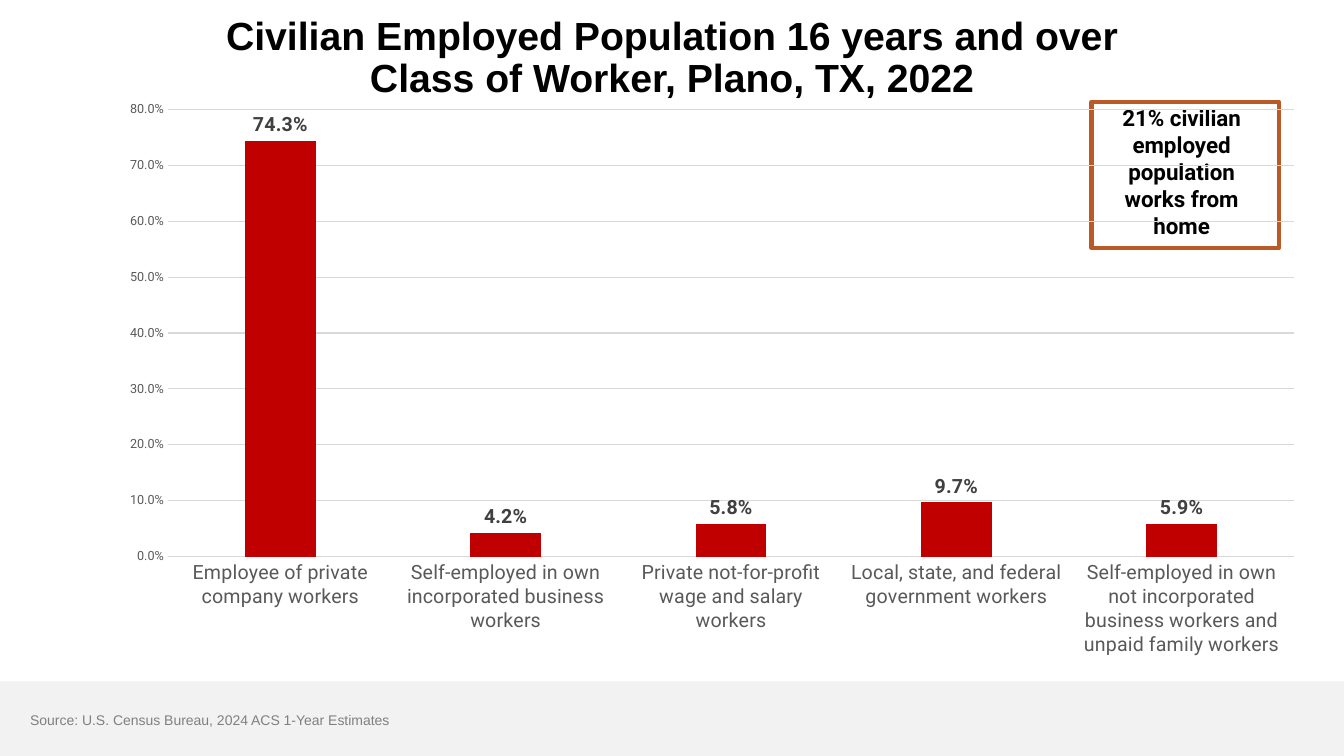
from pptx import Presentation
from pptx.chart.data import CategoryChartData
from pptx.dml.color import RGBColor
from pptx.enum.chart import XL_CHART_TYPE as Kind, XL_LABEL_POSITION as Spot, XL_TICK_MARK as Tick
from pptx.enum.shapes import MSO_SHAPE as Shape
from pptx.enum.text import MSO_ANCHOR as Anchor, MSO_AUTO_SIZE as Fit, PP_ALIGN as Align
from pptx.oxml import parse_xml
from pptx.oxml.ns import nsdecls, qn
from pptx.util import Cm, Pt

BLACK = RGBColor(0x00, 0x00, 0x00)
RED = RGBColor(0xC0, 0x00, 0x00)
RUST = RGBColor(0xBA, 0x5A, 0x27)
DARK = RGBColor(0x40, 0x40, 0x40)
SLATE = RGBColor(0x59, 0x59, 0x59)
GRAY = RGBColor(0x80, 0x80, 0x80)
SILVER = RGBColor(0xD9, 0xD9, 0xD9)
PALE = RGBColor(0xF2, 0xF2, 0xF2)

WIDTH, HEIGHT = 33.87, 19.05
TITLE = ("Civilian Employed Population 16 years and over",
         "Class of Worker, Plano, TX, 2022")
SHARES = {
    "Employee of private company workers": 0.743,
    "Self-employed in own incorporated business workers": 0.042,
    "Private not-for-profit wage and salary workers": 0.058,
    "Local, state, and federal government workers": 0.097,
    "Self-employed in own not incorporated business workers"
    " and unpaid family workers": 0.059,
}


def style(font, face, size, color, bold=False):
    font.name, font.size, font.bold = face, Pt(size), bold
    font.color.rgb = color


def add_rect(slide, x, y, w, h):
    rect = slide.shapes.add_shape(Shape.RECTANGLE, Cm(x), Cm(y), Cm(w), Cm(h))
    rect.shadow.inherit = False
    return rect


def add_text(slide, x, y, w, h, text):
    frame = slide.shapes.add_textbox(Cm(x), Cm(y), Cm(w), Cm(h)).text_frame
    frame.word_wrap = True
    frame.text = text
    return frame, frame.paragraphs[0]


def add_title(slide, x, y, w, h):
    title = slide.shapes.title
    title.left, title.top, title.width, title.height = Cm(x), Cm(y), Cm(w), Cm(h)
    frame = title.text_frame
    frame.auto_size = Fit.NONE
    frame.vertical_anchor = Anchor.MIDDLE
    para = frame.paragraphs[0]
    para.add_run().text = TITLE[0]
    para.add_line_break()
    para.add_run().text = TITLE[1]
    para.alignment, para.line_spacing = Align.CENTER, 0.9
    style(para.font, "Arial", 28, BLACK, True)


def add_footer(slide, x, y, w, h):
    band = add_rect(slide, x, y, w, h)
    band.fill.solid()
    band.fill.fore_color.rgb = PALE
    band.line.fill.background()
    frame, para = add_text(slide, x + 0.51, y + 0.48, 26.29, 1.02,
                           "Source: U.S. Census Bureau, 2024 ACS 1-Year Estimates")
    frame.vertical_anchor = Anchor.MIDDLE
    para.line_spacing = 0.9
    style(para.font, "Arial", 10, GRAY)


def add_note(slide, x, y, w, h):
    frame, para = add_text(slide, x + 0.15, y - 0.06, w - 0.48, h,
                           "21% civilian employed population works from home")
    frame.auto_size = Fit.SHAPE_TO_FIT_TEXT
    para.alignment = Align.CENTER
    style(para.font, "Roboto", 16, BLACK, True)
    edge = add_rect(slide, x, y, w, h)
    edge.fill.background()
    edge.line.color.rgb = RUST
    edge.line.width = Pt(3)


def set_plot(chart, x, y, w, h):
    """Fix the inner plot area as fractions of the chart; clear the backdrop."""
    area = chart.plots[0]._element.getparent()
    for old in area.findall(qn("c:layout")):
        area.remove(old)
    sizes = "".join(f'<c:{key} val="{val}"/>' for key, val in zip("xywh", (x, y, w, h)))
    area.insert(0, parse_xml(
        f'<c:layout {nsdecls("c")}><c:manualLayout><c:layoutTarget val="inner"/>'
        f'<c:xMode val="edge"/><c:yMode val="edge"/>{sizes}'
        '</c:manualLayout></c:layout>'))
    area.getparent().addnext(parse_xml(
        f'<c:spPr {nsdecls("c", "a")}><a:noFill/><a:ln><a:noFill/></a:ln></c:spPr>'))


def add_bars(slide, x, y, w, h):
    data = CategoryChartData(number_format="0.0%")
    data.categories = SHARES.keys()
    data.add_series("Series 1", SHARES.values())
    chart = slide.shapes.add_chart(
        Kind.COLUMN_CLUSTERED, Cm(x), Cm(y), Cm(w), Cm(h), data).chart
    chart.has_title = chart.has_legend = False
    style(chart.font, "Roboto", 10, BLACK)
    set_plot(chart, 0.051, 0.032, 0.929, 0.773)

    plot = chart.plots[0]
    plot.gap_width, plot.overlap, plot.vary_by_categories = 219, -27, False
    bars = plot.series[0].format.fill
    bars.solid()
    bars.fore_color.rgb = RED
    plot.has_data_labels = True
    labels = plot.data_labels
    labels.show_value, labels.position = True, Spot.OUTSIDE_END
    labels.number_format, labels.number_format_is_linked = "0.0%", False
    style(labels.font, "Roboto", 14, DARK, True)

    cats, vals = chart.category_axis, chart.value_axis
    for axis, size in ((cats, 14), (vals, 9)):
        axis.major_tick_mark = axis.minor_tick_mark = Tick.NONE
        style(axis.tick_labels.font, "Roboto", size, SLATE)
    vals.minimum_scale, vals.maximum_scale, vals.major_unit = 0, 0.8, 0.1
    vals.tick_labels.number_format = "0.0%"
    vals.tick_labels.number_format_is_linked = False
    vals.has_major_gridlines = True
    vals.format.line.fill.background()
    for line in (cats.format.line, vals.major_gridlines.format.line):
        line.color.rgb = SILVER
        line.width = Pt(0.75)


def main():
    deck = Presentation()
    deck.slide_width, deck.slide_height = Cm(WIDTH), Cm(HEIGHT)
    slide = deck.slides.add_slide(deck.slide_layouts[5])
    add_title(slide, 0, 0, WIDTH, 2.95)
    add_footer(slide, 0, 17.17, WIDTH, HEIGHT - 17.17)
    add_note(slide, 27.51, 2.57, 4.72, 3.68)
    add_bars(slide, 2.67, 2.29, 30.56, 14.58)
    deck.save("out.pptx")


if __name__ == "__main__":
    main()
